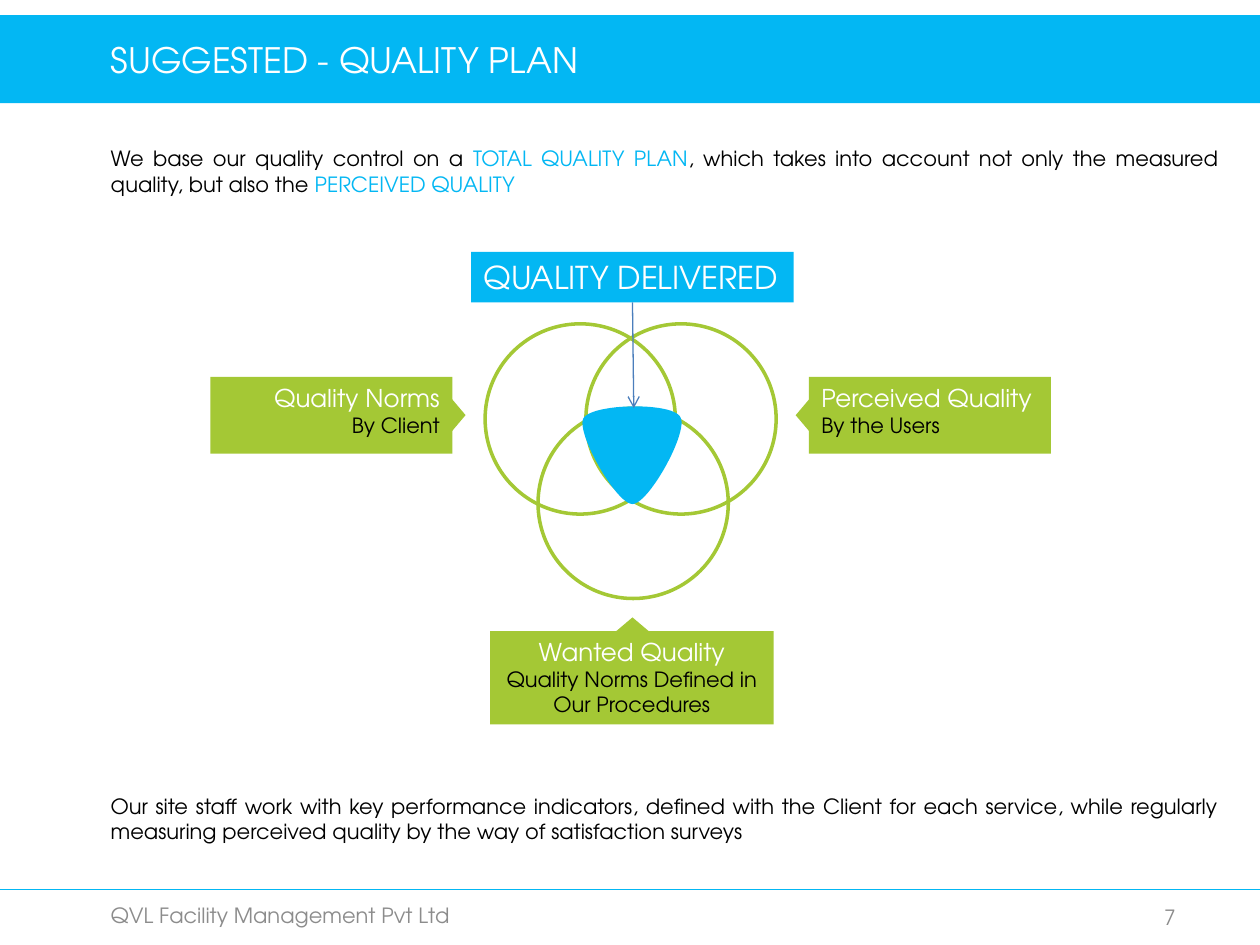
from lxml import etree
from pptx import Presentation
from pptx.dml.color import RGBColor
from pptx.enum.dml import MSO_LINE
from pptx.enum.shapes import MSO_CONNECTOR, MSO_SHAPE
from pptx.enum.text import MSO_ANCHOR, MSO_AUTO_SIZE, PP_ALIGN
from pptx.oxml.ns import qn
from pptx.util import Inches, Pt

RECT, OVAL, TRIANGLE = MSO_SHAPE.RECTANGLE, MSO_SHAPE.OVAL, MSO_SHAPE.ISOSCELES_TRIANGLE
STRAIGHT, SOLID = MSO_CONNECTOR.STRAIGHT, MSO_LINE.SOLID
TOP, MIDDLE = MSO_ANCHOR.TOP, MSO_ANCHOR.MIDDLE
LEFT, CENTER, RIGHT, JUSTIFY = PP_ALIGN.LEFT, PP_ALIGN.CENTER, PP_ALIGN.RIGHT, PP_ALIGN.JUSTIFY
FIT, FIXED = MSO_AUTO_SIZE.SHAPE_TO_FIT_TEXT, MSO_AUTO_SIZE.NONE

FONT = "TeX Gyre Adventor"
BLUE = RGBColor(0x03, 0xB7, 0xF3)
GREEN = RGBColor(0xA4, 0xC8, 0x35)
ARROW_BLUE = RGBColor(0x4B, 0x7E, 0xBC)
GRAY = RGBColor(0x8C, 0x8C, 0x8C)
BLACK = RGBColor(0, 0, 0)
WHITE = RGBColor(0xFF, 0xFF, 0xFF)


def write(frame, paragraphs, align=LEFT, anchor=TOP, before=0, wrap=True, fit=FIXED):
    """Fill a text frame with paragraphs, each a list of (text, size, colour) runs."""
    frame.word_wrap = wrap
    frame.auto_size = fit
    frame.vertical_anchor = anchor
    for index, runs in enumerate(paragraphs):
        paragraph = frame.add_paragraph() if index else frame.paragraphs[0]
        paragraph.alignment = align
        paragraph.space_before = Pt(before)
        for words, size, color in runs:
            run = paragraph.add_run()
            run.text = words
            run.font.name = FONT
            run.font.size = Pt(size)
            run.font.color.rgb = color


def curve_points(start, curves, steps=24):
    """Return the points along a chain of cubic Bezier curves."""
    points = [start]
    for c1, c2, end in curves:
        for step in range(1, steps + 1):
            t = step / steps
            u = 1 - t
            points.append(tuple(
                u**3 * a + 3 * u * u * t * b + 3 * u * t * t * c + t**3 * d
                for a, b, c, d in zip(start, c1, c2, end)))
        start = end
    return points


class SlideBuilder:
    """Draws styled elements on the current slide."""

    def __init__(self, slide):
        self.slide = slide

    def text(self, left, top, width, height, paragraphs, **style):
        box = self.slide.shapes.add_textbox(*map(Inches, (left, top, width, height)))
        write(box.text_frame, paragraphs, **style)

    def paint(self, shape, color):
        shape.shadow.inherit = False
        shape.fill.solid()
        shape.fill.fore_color.rgb = color
        shape.line.fill.background()

    def solid(self, kind, left, top, width, height, color, rotation=0):
        shape = self.slide.shapes.add_shape(kind, *map(Inches, (left, top, width, height)))
        self.paint(shape, color)
        shape.rotation = rotation
        return shape

    def ring(self, left, top, diameter):
        ring = self.slide.shapes.add_shape(OVAL, *map(Inches, (left, top, diameter, diameter)))
        ring.shadow.inherit = False
        ring.fill.background()
        ring.line.color.rgb = GREEN
        ring.line.width = Pt(2)

    def callout(self, left, top, width, height, heading, detail, align, pointer, rotation):
        label = self.solid(RECT, left, top, width, height, GREEN)
        write(label.text_frame, [[(heading, 14, WHITE)], [(detail, 12, BLACK)]], align=align)
        self.solid(TRIANGLE, *pointer, 0.26, 0.11, GREEN, rotation)

    def outline(self, points, color):
        corners = [(Inches(x), Inches(y)) for x, y in points]
        builder = self.slide.shapes.build_freeform(*corners[0])
        builder.add_line_segments(corners[1:], close=True)
        self.paint(builder.convert_to_shape(), color)

    def line(self, start, end, color, width, arrow=False):
        line = self.slide.shapes.add_connector(STRAIGHT, *map(Inches, (*start, *end)))
        line.line.color.rgb = color
        line.line.width = Pt(width)
        line.line.dash_style = SOLID
        properties = line._element.spPr
        if arrow:
            etree.SubElement(properties.find(qn("a:ln")), qn("a:tailEnd"), type="arrow")
        etree.SubElement(properties, qn("a:effectLst"))
        return line


def main():
    presentation = Presentation()
    presentation.slide_width = Inches(10)
    presentation.slide_height = Inches(7.5)
    page = SlideBuilder(presentation.slides.add_slide(presentation.slide_layouts[6]))
    margin, body_width = 0.78, 8.99
    body = {"align": JUSTIFY, "before": 8, "fit": FIT}

    page.line((0, 7.06), (10, 7.06), BLUE, 1)
    page.text(7.1, 7.08, 2.33, 0.4, [[("7", 12, GRAY)]], align=RIGHT, anchor=MIDDLE)
    page.text(margin, 1.11, body_width, 0.5, [[
        ("We base our quality control on a ", 12, BLACK),
        ("TOTAL QUALITY PLAN", 12, BLUE),
        (", which takes into account not only the measured quality, but also the ", 12, BLACK),
        ("PERCEIVED QUALITY", 12, BLUE)]], **body)
    page.text(margin, 7.06, 3.17, 0.4,
              [[("QVL Facility Management Pvt Ltd", 12, GRAY)]], anchor=MIDDLE)
    page.solid(RECT, 0, 0.12, 10, 0.7, BLUE)
    page.text(margin, 0.12, 8.15, 0.7, [[("SUGGESTED - QUALITY PLAN", 20, WHITE)]], anchor=MIDDLE)
    page.text(margin, 6.25, body_width, 0.5, [[
        ("Our site staff work with key performance indicators, defined with the Client for "
         "each service, while regularly measuring perceived quality by the way of "
         "satisfaction surveys", 12, BLACK)]], **body)

    for left, top in ((3.85, 2.57), (4.65, 2.57)):
        page.ring(left, top, 1.51)
    page.callout(1.67, 2.99, 1.92, 0.61, "Quality Norms", "By Client",
                 RIGHT, (3.51, 3.24), 90)
    page.callout(6.42, 2.99, 1.92, 0.61, "Perceived Quality", "By the Users",
                 LEFT, (6.24, 3.24), 270)
    page.ring(4.27, 3.24, 1.51)
    page.outline(curve_points((4.63, 3.32), [
        ((4.57, 3.43), (4.89, 4), (5.02, 4)),
        ((5.15, 4), (5.47, 3.42), (5.4, 3.31)),
        ((5.34, 3.19), (4.7, 3.2), (4.63, 3.32))]), BLUE)
    page.callout(3.89, 5.01, 2.25, 0.74, "Wanted Quality",
                 "Quality Norms Defined in Our Procedures", CENTER, (4.89, 4.9), 0)

    delivered = page.solid(RECT, 3.74, 2, 2.56, 0.4, BLUE)
    write(delivered.text_frame, [[("QUALITY DELIVERED", 18, WHITE)]], wrap=False, fit=FIT)
    arrow = page.line((5.02, 2.4), (5.03, 3.24), ARROW_BLUE, 0.75, arrow=True)
    arrow.begin_connect(delivered, 2)

    presentation.save("out.pptx")


if __name__ == "__main__":
    main()
